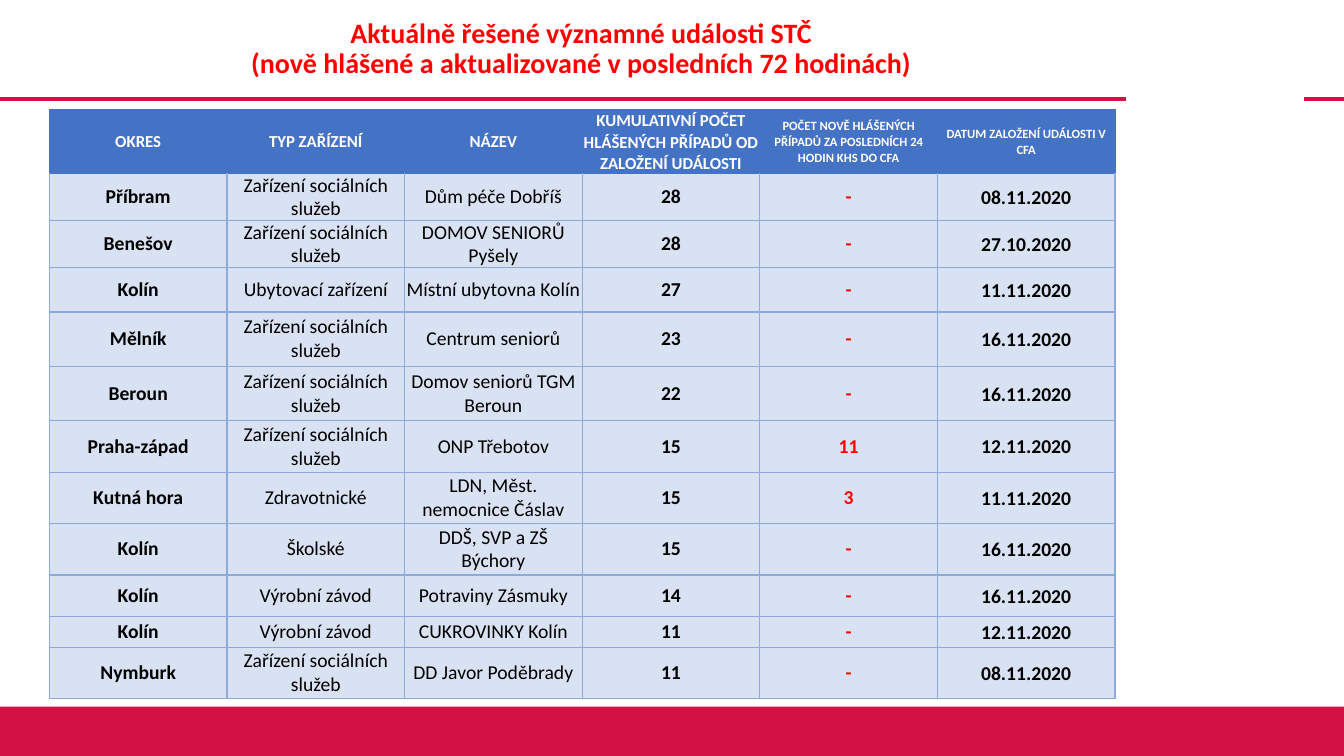
from lxml.etree import SubElement
from pptx import Presentation
from pptx.dml.color import RGBColor
from pptx.enum.shapes import MSO_CONNECTOR, MSO_SHAPE
from pptx.enum.text import MSO_ANCHOR, PP_ALIGN
from pptx.oxml.ns import qn
from pptx.util import Inches, Pt

W, H = 13.33, 7.5
CRIMSON, RED, WHITE, BLACK = "D31145", "FF0000", "FFFFFF", "000000"
HEAD_FILL, BODY_FILL, BODY_LINE = "4472C4", "D9E2F3", "8EAADB"
RULE_Y = 0.98

COL_WIDTH = 10.57 / 6
ROW_HEIGHTS = [0.49, 0.46, 0.46, 0.44, 0.54, 0.54, 0.51, 0.51, 0.51, 0.41, 0.31, 0.51]
TITLE = ("Aktuálně řešené významné události STČ\v"
         "(nově hlášené a aktualizované v posledních 72 hodinách)")
HEADERS = ["OKRES", "TYP ZAŘÍZENÍ", "NÁZEV",
           "KUMULATIVNÍ POČET HLÁŠENÝCH PŘÍPADŮ OD ZALOŽENÍ UDÁLOSTI",
           "POČET NOVĚ HLÁŠENÝCH PŘÍPADŮ ZA POSLEDNÍCH 24 HODIN KHS DO CFA",
           "DATUM ZALOŽENÍ UDÁLOSTI V CFA"]
SOCIAL, FACTORY = "Zařízení sociálních služeb", "Výrobní závod"
EVENTS = [
    ("Příbram", SOCIAL, "Dům péče Dobříš", "28", "-", "08.11.2020"),
    ("Benešov", SOCIAL, "DOMOV SENIORŮ Pyšely", "28", "-", "27.10.2020"),
    ("Kolín", "Ubytovací zařízení", "Místní ubytovna Kolín", "27", "-", "11.11.2020"),
    ("Mělník", SOCIAL, "Centrum seniorů", "23", "-", "16.11.2020"),
    ("Beroun", SOCIAL, "Domov seniorů TGM Beroun", "22", "-", "16.11.2020"),
    ("Praha-západ", SOCIAL, "ONP Třebotov", "15", "11", "12.11.2020"),
    ("Kutná hora", "Zdravotnické", "LDN, Měst. nemocnice Čáslav", "15", "3", "11.11.2020"),
    ("Kolín", "Školské", "DDŠ, SVP a ZŠ Býchory", "15", "-", "16.11.2020"),
    ("Kolín", FACTORY, "Potraviny Zásmuky", "14", "-", "16.11.2020"),
    ("Kolín", FACTORY, "CUKROVINKY Kolín", "11", "-", "12.11.2020"),
    ("Nymburk", SOCIAL, "DD Javor Poděbrady", "11", "-", "08.11.2020"),
]
# Format of each column: header size and spacing, body weight, colour and spacing
HEAD_FORMATS = [(12, 1)] * 3 + [(12, 1.05), (9, 1.05), (9, 1.05)]
BODY_FORMATS = [(True, BLACK, 1), (False, BLACK, 1), (False, BLACK, 1),
                (True, BLACK, 1), (True, RED, 1), (True, BLACK, 1.07)]


def rgb(value):
    return RGBColor.from_string(value)


def write(tf, text, size, color, bold=True, spacing=1):
    p = tf.paragraphs[0]
    p.text = text
    p.alignment = PP_ALIGN.CENTER
    p.line_spacing = spacing
    for r in p.runs:
        for name, value in {"name": "Calibri", "size": Pt(size), "bold": bold}.items():
            setattr(r.font, name, value)
        r.font.color.rgb = rgb(color)


def add_rule(s, x1, x2):
    line = s.shapes.add_connector(MSO_CONNECTOR.STRAIGHT, Inches(x1), Inches(RULE_Y),
                                  Inches(x2), Inches(RULE_Y))
    line.line.color.rgb = rgb(CRIMSON)
    line.line.width = Pt(3)
    SubElement(line._element.spPr, qn("a:effectLst"))


def add_footer(s, top):
    sp = s.shapes.add_shape(MSO_SHAPE.RECTANGLE, 0, Inches(top), Inches(W), Inches(H - top))
    sp.shadow.inherit = False
    sp.fill.solid()
    sp.fill.fore_color.rgb = rgb(CRIMSON)
    sp.line.fill.background()


def add_title(s):
    tf = s.shapes.add_textbox(Inches(0.36), 0, Inches(10.81), Inches(RULE_Y)).text_frame
    tf.word_wrap = True
    tf.vertical_anchor = MSO_ANCHOR.MIDDLE
    write(tf, TITLE, 20, RED, spacing=0.9)


def style_cell(cell, fill, borders, side=0):
    margins = {"margin_left": side, "margin_right": side, "margin_top": 0, "margin_bottom": 0}
    for name, value in margins.items():
        setattr(cell, name, Inches(value))
    cell.vertical_anchor = MSO_ANCHOR.MIDDLE
    tcPr = cell._tc.get_or_add_tcPr()
    for edge in ("L", "R", "T", "B"):
        ln = SubElement(tcPr, qn(f"a:ln{edge}"), w=str(Pt(1)))
        SubElement(SubElement(ln, qn("a:solidFill")), qn("a:srgbClr"),
                   val=borders.get(edge, borders["all"]))
    cell.fill.solid()
    cell.fill.fore_color.rgb = rgb(fill)


def add_events_table(s):
    table = s.shapes.add_table(len(ROW_HEIGHTS), len(HEADERS), Inches(0.49), Inches(1.09),
                               Inches(COL_WIDTH * len(HEADERS)),
                               Inches(sum(ROW_HEIGHTS))).table
    table.horz_banding = False
    for column in table.columns:
        column.width = Inches(COL_WIDTH)
    for row, height in zip(table.rows, ROW_HEIGHTS):
        row.height = Inches(height)
    # Header row
    for c, (text, (size, spacing)) in enumerate(zip(HEADERS, HEAD_FORMATS)):
        cell = table.cell(0, c)
        style_cell(cell, HEAD_FILL, {"all": HEAD_FILL}, 0.05 if c == 4 else 0)
        write(cell.text_frame, text, size, WHITE, spacing=spacing)
    # Event rows
    for r, event in enumerate(EVENTS, 1):
        borders = {"all": BODY_LINE, "T": HEAD_FILL if r == 1 else BODY_LINE}
        for c, (text, (bold, color, spacing)) in enumerate(zip(event, BODY_FORMATS)):
            cell = table.cell(r, c)
            style_cell(cell, BODY_FILL, borders, 0.05 if c == 5 else 0)
            write(cell.text_frame, text, 14, color, bold, spacing)


def main():
    prs = Presentation()
    prs.slide_width, prs.slide_height = Inches(W), Inches(H)
    s = prs.slides.add_slide(prs.slide_layouts[6])
    add_rule(s, 0, 11.17)
    add_rule(s, 12.93, W)
    add_footer(s, 7.01)
    add_title(s)
    add_events_table(s)
    prs.save("out.pptx")


if __name__ == "__main__":
    main()
